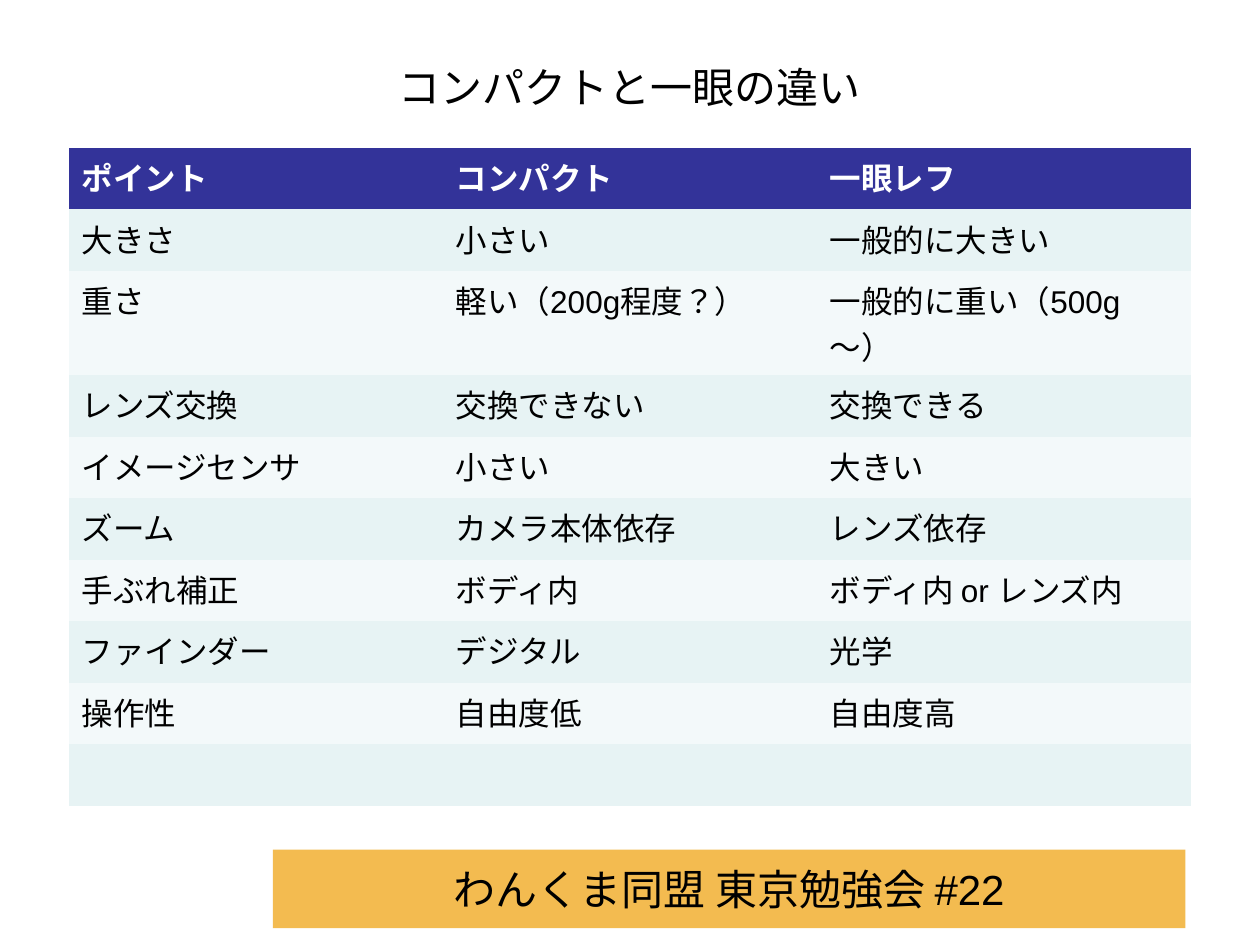
from pptx import Presentation
from pptx.dml.color import RGBColor
from pptx.enum.lang import MSO_LANGUAGE_ID
from pptx.enum.shapes import MSO_SHAPE
from pptx.enum.text import MSO_ANCHOR, PP_ALIGN
from pptx.oxml.ns import qn
from pptx.util import Cm, Pt

NO_STYLE_NO_GRID = "{2D5ABB26-0587-4C30-8999-92F81FD0307C}"
HEADER_FILL = "333399"
BAND_FILLS = ["F3F9FA", "E7F3F4"]
WEIGHT_ROW = 2


def paint(fill, color):
    fill.solid()
    fill.fore_color.rgb = RGBColor.from_string(color)


def write(frame, text, size=18, color="000000", bold=False, align=PP_ALIGN.LEFT):
    frame.word_wrap = True
    paragraph = frame.paragraphs[0]
    paragraph.alignment = align
    run = paragraph.add_run()
    run.text = text
    font = run.font
    font.name, font.size, font.bold = "Arial", Pt(size), bold
    font.language_id = MSO_LANGUAGE_ID.JAPANESE
    paint(font.fill, color)


prs = Presentation()
prs.slide_width, prs.slide_height = Cm(25.4), Cm(19.05)
slide = prs.slides.add_slide(prs.slide_layouts[6])

# Event banner
banner = slide.shapes.add_shape(
    MSO_SHAPE.RECTANGLE, Cm(5.5), Cm(17.13), Cm(18.4), Cm(1.58))
banner.shadow.inherit = False
paint(banner.fill, "F3BB50")
banner.line.fill.background()
banner.text_frame.vertical_anchor = MSO_ANCHOR.MIDDLE
write(banner.text_frame, "わんくま同盟 東京勉強会 #22", size=24, align=PP_ALIGN.CENTER)

# Title
title = slide.shapes.add_textbox(Cm(1.27), Cm(0.76), Cm(22.86), Cm(1.96))
title.text_frame.vertical_anchor = MSO_ANCHOR.MIDDLE
write(title.text_frame, "コンパクトと一眼の違い", size=24, align=PP_ALIGN.CENTER)

# Comparison table, with an empty last row
comparison = [
    ("ポイント", "コンパクト", "一眼レフ"),
    ("大きさ", "小さい", "一般的に大きい"),
    ("重さ", "軽い（200g程度？）", "一般的に重い（500g～）"),
    ("レンズ交換", "交換できない", "交換できる"),
    ("イメージセンサ", "小さい", "大きい"),
    ("ズーム", "カメラ本体依存", "レンズ依存"),
    ("手ぶれ補正", "ボディ内", "ボディ内 or レンズ内"),
    ("ファインダー", "デジタル", "光学"),
    ("操作性", "自由度低", "自由度高"),
    ("", "", ""),
]
table_frame = slide.shapes.add_table(
    len(comparison), 3, Cm(1.39), Cm(2.98), Cm(22.63), Cm(12.4))
for style_id in table_frame.element.iter(qn("a:tableStyleId")):
    style_id.text = NO_STYLE_NO_GRID

# The weight row holds two lines
table_frame.table.rows[WEIGHT_ROW].height = Cm(2.1)

for r, row in enumerate(comparison):
    header = r == 0
    for c, text in enumerate(row):
        cell = table_frame.table.cell(r, c)
        paint(cell.fill, HEADER_FILL if header else BAND_FILLS[r % 2])
        if text:
            write(cell.text_frame, text, bold=header,
                  color="FFFFFF" if header else "000000")

prs.save("out.pptx")
